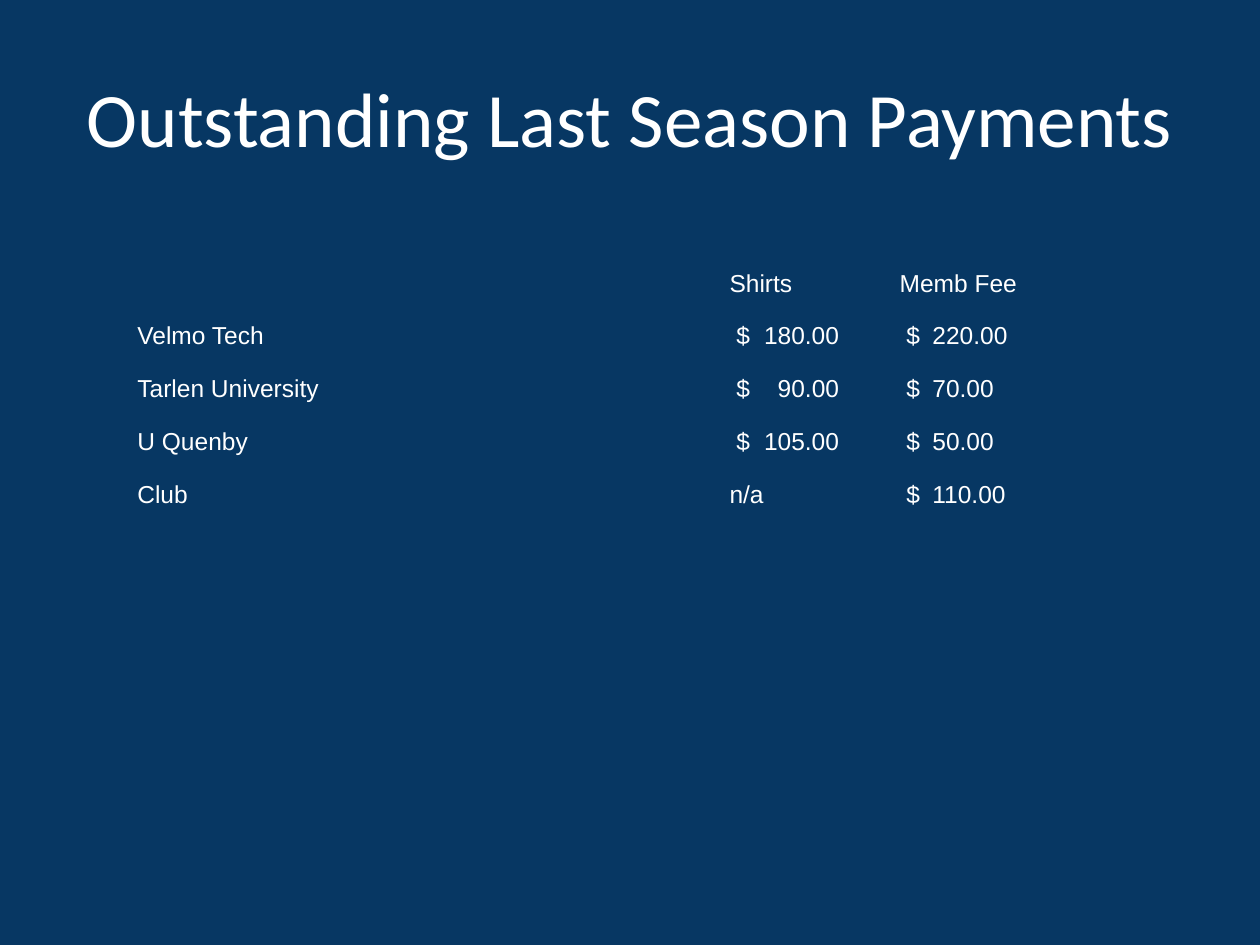
"""Build the slide that lists outstanding payments from last season."""
from lxml.etree import SubElement
from pptx import Presentation
from pptx.dml.color import RGBColor
from pptx.enum.text import MSO_ANCHOR as Anchor, PP_ALIGN as Align
from pptx.oxml.ns import qn
from pptx.util import Inches, Pt

NAVY = RGBColor(0x07, 0x37, 0x63)
WHITE = RGBColor(0xFF, 0xFF, 0xFF)
NO_STYLE = "{2D5ABB26-0587-4C30-8999-92F81FD0307C}"
COLUMN_WIDTHS = (4.7, 1.35, 1.35)
ROW_HEIGHT = 0.42
AMOUNT_TABS = {1: (0.87, "r"), 2: (0.26, "l")}
PAYMENTS = (
    ("", "Shirts", "Memb Fee"),
    ("Velmo Tech", "180.00", "220.00"),
    ("Tarlen University", "90.00", "70.00"),
    ("U Quenby", "105.00", "50.00"),
    ("Club", "n/a", "110.00"),
)


def style_font(font, name, size):
    """Set a white font of the given name and size."""
    font.name = name
    font.size = Pt(size)
    font.color.rgb = WHITE


def add_tab_stop(para, position, alignment):
    """Give a paragraph one tab stop."""
    properties = para._p.get_or_add_pPr()
    tabs = SubElement(properties, qn("a:tabLst"))
    SubElement(tabs, qn("a:tab"), pos=str(Inches(position)), algn=alignment)
    properties.insert(0, tabs)


def place_title(page, text):
    """Write the title across the top of the page."""
    title = page.shapes.title
    title.left, title.top = Inches(0.5), Inches(0.3)
    title.width, title.height = Inches(9), Inches(1.25)
    frame = title.text_frame
    frame.text = text
    frame.vertical_anchor = Anchor.MIDDLE
    para = frame.paragraphs[0]
    para.alignment = Align.CENTER
    style_font(para.font, "Calibri", 44)


def fill_cell(cell, text, column):
    """Write one cell, lining up amounts behind a dollar sign."""
    cell.fill.background()
    cell.vertical_anchor = Anchor.MIDDLE
    cell.margin_top = cell.margin_bottom = Inches(0.02)
    is_amount = text[:1].isdigit()
    para = cell.text_frame.paragraphs[0]
    para.text = f" $\t{text}" if is_amount else text
    style_font(para.font, "Arial", 14)
    if is_amount:
        add_tab_stop(para, *AMOUNT_TABS[column])


def add_payment_table(page):
    """Add the plain table of payments."""
    table = page.shapes.add_table(
        len(PAYMENTS), len(COLUMN_WIDTHS), Inches(0.99), Inches(2.04),
        Inches(sum(COLUMN_WIDTHS)), Inches(ROW_HEIGHT * len(PAYMENTS)),
    ).table
    table.first_row = table.horz_banding = False
    table._tbl.tblPr.find(qn("a:tableStyleId")).text = NO_STYLE
    for column, width in zip(table.columns, COLUMN_WIDTHS):
        column.width = Inches(width)
    for row, values in zip(table.rows, PAYMENTS):
        row.height = Inches(ROW_HEIGHT)
        for column, (cell, text) in enumerate(zip(row.cells, values)):
            fill_cell(cell, text, column)


def main():
    """Build and save the deck."""
    deck = Presentation()
    deck.slide_width, deck.slide_height = Inches(10), Inches(7.5)
    page = deck.slides.add_slide(deck.slide_layouts[5])
    page.background.fill.solid()
    page.background.fill.fore_color.rgb = NAVY
    place_title(page, "Outstanding Last Season Payments")
    add_payment_table(page)
    deck.save("out.pptx")


if __name__ == "__main__":
    main()
